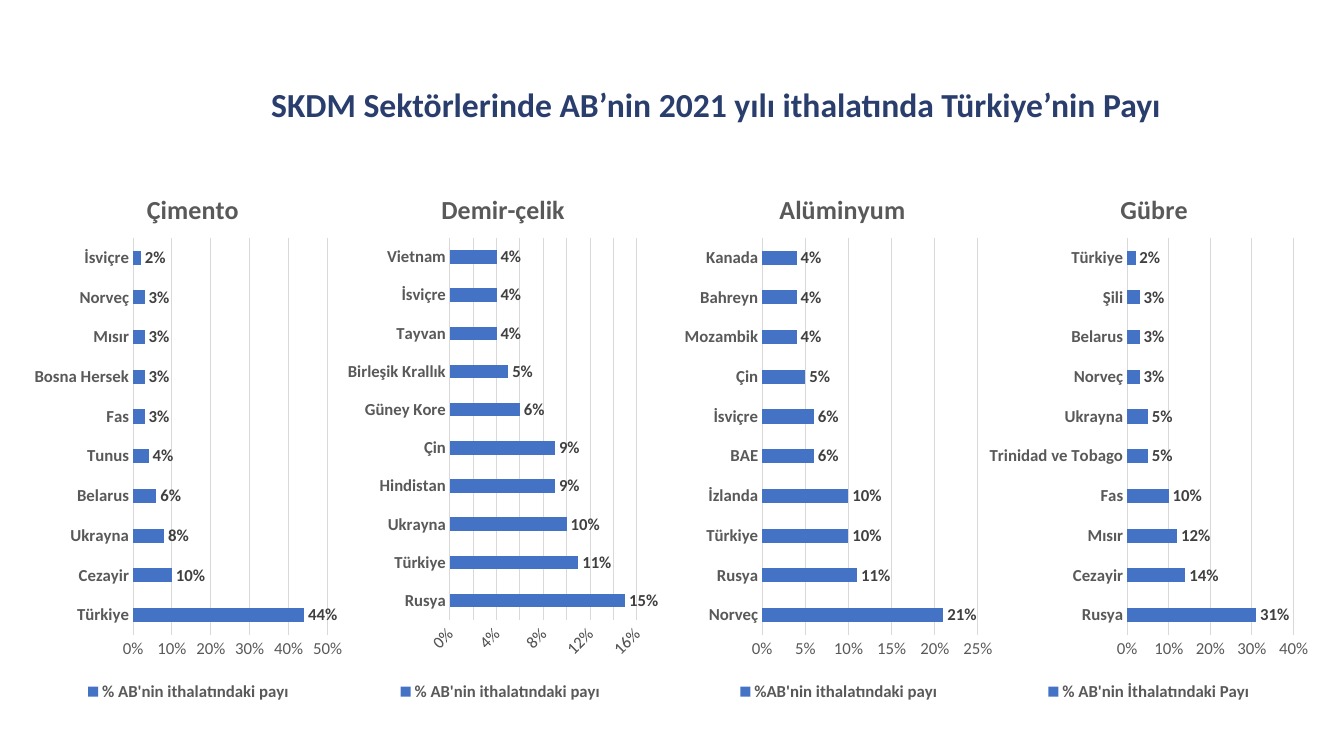
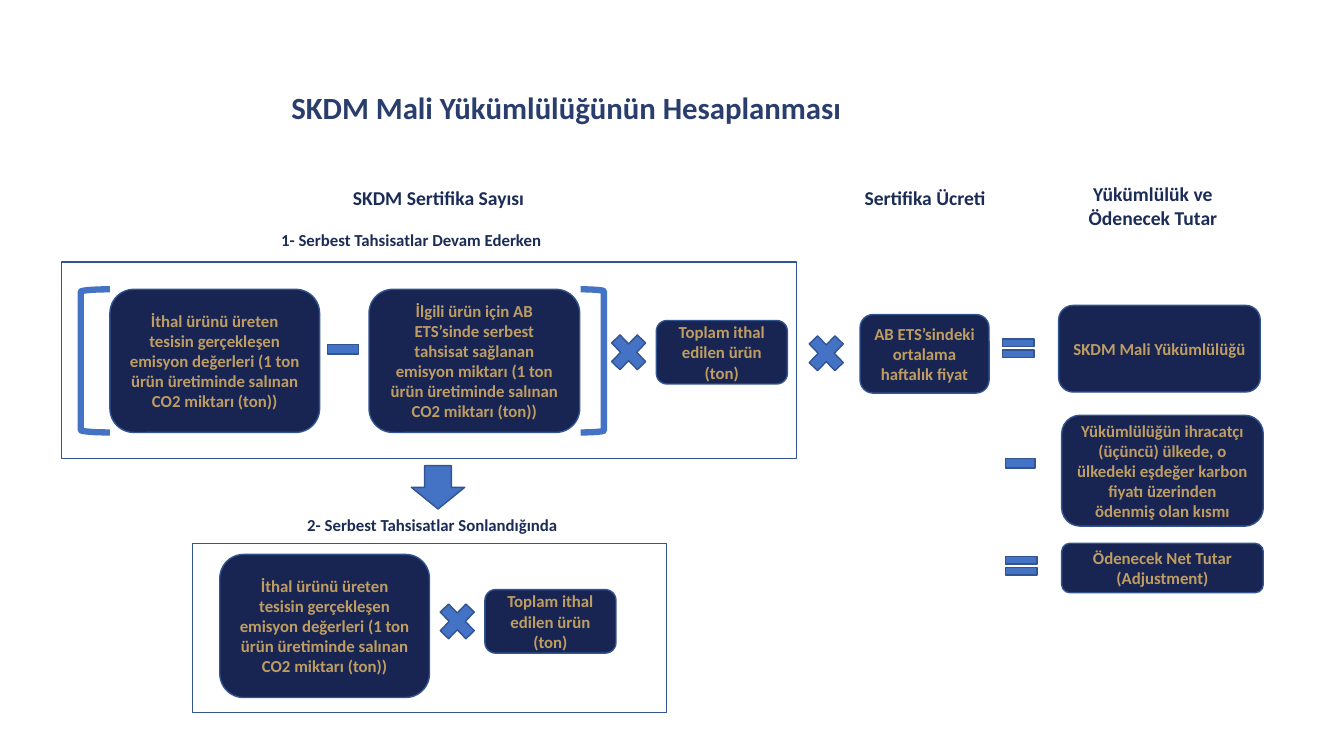
from lxml import etree
from pptx import Presentation
from pptx.chart.data import CategoryChartData
from pptx.dml.color import RGBColor
from pptx.enum.chart import XL_CHART_TYPE, XL_LABEL_POSITION, XL_LEGEND_POSITION, XL_TICK_MARK
from pptx.enum.shapes import MSO_SHAPE
from pptx.enum.text import MSO_ANCHOR, MSO_AUTO_SIZE, PP_ALIGN
from pptx.oxml.ns import qn
from pptx.util import Inches, Pt

BAR = XL_CHART_TYPE.BAR_CLUSTERED
OUTSIDE = XL_LABEL_POSITION.OUTSIDE_END
BOTTOM = XL_LEGEND_POSITION.BOTTOM
NO_TICK = XL_TICK_MARK.NONE
RECT, ROUND = MSO_SHAPE.RECTANGLE, MSO_SHAPE.ROUNDED_RECTANGLE
MINUS, TIMES, EQUAL = MSO_SHAPE.MATH_MINUS, MSO_SHAPE.MATH_MULTIPLY, MSO_SHAPE.MATH_EQUAL
LEFT_BR, RIGHT_BR = MSO_SHAPE.LEFT_BRACKET, MSO_SHAPE.RIGHT_BRACKET
DOWN = MSO_SHAPE.DOWN_ARROW
TOP, MIDDLE = MSO_ANCHOR.TOP, MSO_ANCHOR.MIDDLE
LEFT, CENTER = PP_ALIGN.LEFT, PP_ALIGN.CENTER
NO_FIT = MSO_AUTO_SIZE.NONE

FONT = "Calibri"
COLORS = {
    "title": "2A3E6E", "head": "1B2C57", "box": "182552", "gold": "BF9D62",
    "blue": "4472C4", "edge": "325491", "grid": "D9D9D9", "axis": "595959",
    "label": "404040",
}

CHART_TOP, CHART_HIGH, PLOT_TOP = 1.61, 5.39, 2.36
SHARE = "% AB'nin ithalatındaki payı"
# at: left and width of the chart; plot: left, width and height of the bars' area
CHARTS = [
    dict(name="Çimento", at=(0.28, 3.18), plot=(1.32, 1.93, 3.94), title_x=0.355,
         series=SHARE, top=0.5, step=0.1, turn=0,
         data={"Türkiye": 44, "Cezayir": 10, "Ukrayna": 8, "Belarus": 6, "Tunus": 4,
               "Fas": 3, "Bosna Hersek": 3, "Mısır": 3, "Norveç": 3, "İsviçre": 2}),
    dict(name="Gübre", at=(9.75, 3.29), plot=(11.18, 1.65, 3.94), title_x=0.4,
         series="% AB'nin İthalatındaki Payı", top=0.4, step=0.1, turn=0,
         data={"Rusya": 31, "Cezayir": 14, "Mısır": 12, "Fas": 10,
               "Trinidad ve Tobago": 5, "Ukrayna": 5, "Norveç": 3, "Belarus": 3,
               "Şili": 3, "Türkiye": 2}),
    dict(name="Alüminyum", at=(6.73, 3.18), plot=(7.56, 2.14, 3.94), title_x=0.3,
         series="%AB'nin ithalatındaki payı", top=0.25, step=0.05, turn=0,
         data={"Norveç": 21, "Rusya": 11, "Türkiye": 10, "İzlanda": 10, "BAE": 6,
               "İsviçre": 6, "Çin": 5, "Mozambik": 4, "Bahreyn": 4, "Kanada": 4}),
    dict(name="Demir-çelik", at=(3.42, 3.11), plot=(4.47, 1.87, 3.79), title_x=0.295,
         series=SHARE, top=0.16, step=0.02, turn=-45,
         data={"Rusya": 15, "Türkiye": 11, "Ukrayna": 10, "Hindistan": 9, "Çin": 9,
               "Güney Kore": 6, "Birleşik Krallık": 5, "Tayvan": 4, "İsviçre": 4,
               "Vietnam": 4}),
]

ACTUAL = ("İthal ürünü üreten tesisin gerçekleşen emisyon değerleri "
          "(1 ton ürün üretiminde salınan CO2 miktarı (ton))")
FREE = ("İlgili ürün için AB ETS’sinde serbest tahsisat sağlanan emisyon miktarı "
        "(1 ton ürün üretiminde salınan CO2 miktarı (ton))")
PAID = ("Yükümlülüğün ihracatçı (üçüncü) ülkede, o ülkedeki eşdeğer karbon fiyatı "
        "üzerinden ödenmiş olan kısmı")


def rgb(name):
    return RGBColor.from_string(COLORS[name])


def style(font, size, color, bold=True):
    font.name, font.size, font.bold = FONT, Pt(size), bold
    font.color.rgb = rgb(color)


def write(shape, text, size=12, color="head", align=CENTER, anchor=TOP):
    frame = shape.text_frame
    frame.word_wrap = True
    frame.auto_size = NO_FIT
    frame.vertical_anchor = anchor
    frame.margin_left = frame.margin_right = Inches(0.1)
    frame.margin_top = frame.margin_bottom = Inches(0.05)
    para = frame.paragraphs[0]
    para.text, para.alignment = text, align
    para.space_before = Pt(0)
    para.line_spacing = 1.0
    style(para.runs[0].font, size, color)


def add_title(slide, text, box, size):
    title = slide.shapes.title
    title.left, title.top, title.width, title.height = map(Inches, box)
    write(title, text, size=size, color="title", align=LEFT)


def add_head(slide, text, box, size=14):
    write(slide.shapes.add_textbox(*map(Inches, box)), text, size=size)


def add_shape(slide, kind, box, fill="blue", line="edge", width=1):
    shape = slide.shapes.add_shape(kind, *map(Inches, box))
    shape.shadow.inherit = False
    if fill:
        shape.fill.solid()
        shape.fill.fore_color.rgb = rgb(fill)
    else:
        shape.fill.background()
    shape.line.color.rgb = rgb(line)
    shape.line.width = Pt(width)
    return shape


def add_box(slide, text, box):
    shape = add_shape(slide, ROUND, box, fill="box")
    write(shape, text, color="gold", anchor=MIDDLE)


def set_layout(parent, index, inner=False, **parts):
    """Fix a chart part's place, in fractions of the chart."""
    for old in parent.findall(qn("c:layout")):
        parent.remove(old)
    layout = etree.Element(qn("c:layout"))
    parent.insert(index, layout)
    manual = etree.SubElement(layout, qn("c:manualLayout"))
    if inner:
        etree.SubElement(manual, qn("c:layoutTarget")).set("val", "inner")
    for key in ("x", "y"):
        etree.SubElement(manual, qn(f"c:{key}Mode")).set("val", "edge")
    for key, value in parts.items():
        etree.SubElement(manual, qn(f"c:{key}")).set("val", f"{value:.4f}")


def format_axes(chart, top, step, turn):
    cats, vals = chart.category_axis, chart.value_axis
    for axis in (cats, vals):
        axis.major_tick_mark = axis.minor_tick_mark = NO_TICK
        style(axis.tick_labels.font, 12, "axis", bold=axis is cats)
    cats.has_major_gridlines = False
    vals.has_major_gridlines = True
    for line in (cats.format.line, vals.major_gridlines.format.line):
        line.color.rgb = rgb("grid")
        line.width = Pt(0.75)
    vals.format.line.fill.background()
    vals.minimum_scale, vals.maximum_scale, vals.major_unit = 0, top, step
    vals.tick_labels.number_format = "0%"
    vals.tick_labels.number_format_is_linked = False
    body = vals._element.find(qn("c:txPr")).find(qn("a:bodyPr"))
    body.set("rot", str(turn * 60000))


def add_bars(slide, name, at, plot, title_x, series, top, step, turn, data):
    left, wide = at
    feed = CategoryChartData(number_format="0%")
    feed.categories = list(data)
    feed.add_series(series, [value / 100 for value in data.values()])
    box = (left, CHART_TOP, wide, CHART_HIGH)
    chart = slide.shapes.add_chart(BAR, *map(Inches, box), feed).chart
    style(chart.font, 10, "axis", bold=False)

    chart.has_title = True
    para = chart.chart_title.text_frame.paragraphs[0]
    para.text = name
    style(para.runs[0].font, 18.6, "axis")
    set_layout(chart.chart_title._element, 1, x=title_x, y=0.045)

    plot_left, plot_wide, plot_high = plot
    set_layout(chart._chartSpace.chart.plotArea, 0, inner=True,
               x=(plot_left - left) / wide, y=(PLOT_TOP - CHART_TOP) / CHART_HIGH,
               w=plot_wide / wide, h=plot_high / CHART_HIGH)
    format_axes(chart, top, step, turn)

    chart.has_legend = True
    chart.legend.position = BOTTOM
    chart.legend.include_in_layout = False
    style(chart.legend.font, 12, "axis")

    bars = chart.plots[0]
    bars.gap_width, bars.vary_by_categories = 182, False
    fill = bars.series[0].format.fill
    fill.solid()
    fill.fore_color.rgb = rgb("blue")
    bars.has_data_labels = True
    labels = bars.data_labels
    labels.show_value, labels.position = True, OUTSIDE
    labels.number_format, labels.number_format_is_linked = "0%", False
    style(labels.font, 12, "label")


def add_frame(slide, box):
    add_shape(slide, RECT, box, fill=None)


def add_total(slide, x, y):
    """Place a times sign and the tonnage box to its right."""
    add_shape(slide, TIMES, (x, y + 0.06, 0.49, 0.51))
    add_box(slide, "Toplam ithal edilen ürün (ton)", (x + 0.52, y, 1.3, 0.63))


def add_during(slide, x, y):
    """Draw the formula used while free allocation goes on."""
    add_head(slide, "1- Serbest Tahsisatlar Devam Ederken", (x + 1.94, y - 0.37, 3.06, 0.3), 12)
    row = y + 0.27
    add_box(slide, ACTUAL, (x + 0.48, row, 2.08, 1.42))
    add_shape(slide, MINUS, (x + 2.58, y + 0.67, 0.42, 0.39))
    add_box(slide, FREE, (x + 3.05, row, 2.09, 1.42))
    for kind, left, wide in ((LEFT_BR, 0.19, 0.29), (RIGHT_BR, 5.15, 0.23)):
        add_shape(slide, kind, (x + left, row, wide, 1.42), fill=None, line="blue", width=4.5)
    add_total(slide, x + 5.38, y + 0.58)
    add_frame(slide, (x, y, 7.29, 1.95))


def add_after(slide, x, y):
    """Draw the formula used once free allocation has ended."""
    add_head(slide, "2- Serbest Tahsisatlar Sonlandığında", (x + 0.85, y - 0.33, 3.06, 0.3), 12)
    add_box(slide, ACTUAL, (x + 0.27, y + 0.11, 2.08, 1.42))
    add_total(slide, x + 2.38, y + 0.46)
    add_frame(slide, (x, y, 4.7, 1.68))


def add_price(slide, x, y):
    add_head(slide, "Sertifika Ücreti", (x + 0.38, y, 1.69, 0.34))
    add_shape(slide, TIMES, (x, y + 1.45, 0.49, 0.51))
    add_box(slide, "AB ETS’sindeki ortalama haftalık fiyat", (x + 0.58, y + 1.32, 1.28, 0.78))


def add_result(slide, x, y):
    """Stack the liability, the deduction and the net sum, each with its sign."""
    add_head(slide, "Yükümlülük ve Ödenecek Tutar", (x + 0.45, y, 2.19, 0.57))
    rows = [
        (EQUAL, 0, 1.54, 0.31, "SKDM Mali Yükümlülüğü", 0.61, 1.27, 0.86),
        (MINUS, 0.03, 2.63, 0.41, PAID, 0.64, 2.36, 1.1),
        (EQUAL, 0.03, 3.7, 0.31, "Ödenecek Net Tutar (Adjustment)", 0.64, 3.63, 0.49),
    ]
    for sign, sign_x, sign_y, sign_high, text, left, top, high in rows:
        wide = 0.4 if sign == MINUS else 0.42
        add_shape(slide, sign, (x + sign_x, y + sign_y, wide, sign_high))
        add_box(slide, text, (x + left, y + top, 2, high))


def share_slide(slide):
    add_title(slide, "SKDM Sektörlerinde AB’nin 2021 yılı ithalatında Türkiye’nin Payı",
              (2.59, 0.78, 9.74, 0.5), 24)
    for chart in CHARTS:
        add_bars(slide, **chart)


def cost_slide(slide):
    add_title(slide, "SKDM Mali Yükümlülüğünün Hesaplanması", (2.79, 0.83, 6.18, 0.47), 22)
    add_head(slide, "SKDM Sertifika Sayısı", (2.82, 1.8, 3.06, 0.34))
    add_during(slide, 0.61, 2.6)
    add_shape(slide, DOWN, (4.08, 4.62, 0.53, 0.43))
    add_after(slide, 1.91, 5.39)
    add_price(slide, 7.95, 1.8)
    add_result(slide, 9.89, 1.76)


def main():
    deck = Presentation()
    deck.slide_width, deck.slide_height = Inches(13.33), Inches(7.5)
    for build in (share_slide, cost_slide):
        build(deck.slides.add_slide(deck.slide_layouts[5]))
    deck.save("out.pptx")


if __name__ == "__main__":
    main()
